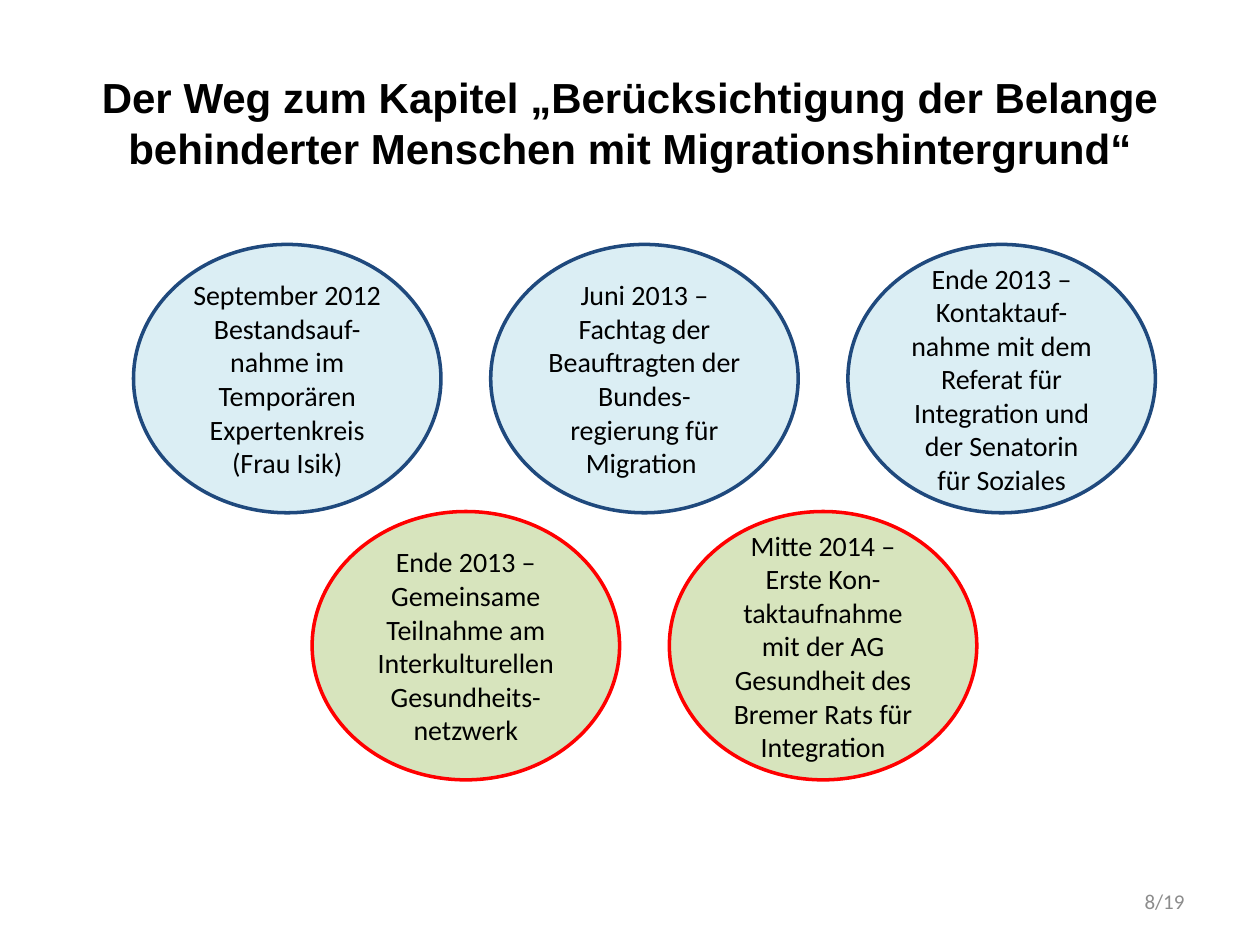
import pptx
import pptx.util
import pptx.dml.color
import pptx.enum.shapes
import pptx.enum.text

ALIGN = pptx.enum.text.PP_ALIGN
ANCHOR = pptx.enum.text.MSO_ANCHOR


def paint(code):
    return pptx.dml.color.RGBColor.from_string(code)


class Deck:
    """Holds the style, the grid and the current slide."""

    left, top = 1.06, 1.94
    step = 5.67 / 4  # half the gap between oval centres in a row
    drop = 2.12
    size = 2.44, 2.13
    looks = {"blue": ("DBEEF4", "1F497D"), "green": ("D7E4BD", "FF0000")}

    def __init__(self):
        self.show = pptx.Presentation()
        self.show.slide_width = pptx.util.Inches(10)
        self.show.slide_height = pptx.util.Inches(7.5)
        self.slide = self.show.slides.add_slide(self.show.slide_layouts[5])

    def label(self, frame, lines, align, anchor, code, **font):
        frame.word_wrap = True
        frame.auto_size = pptx.enum.text.MSO_AUTO_SIZE.NONE
        frame.vertical_anchor = anchor
        frame.text = "\n".join(lines)
        for para in frame.paragraphs:
            para.alignment = align
            for run in para.runs:
                for key, value in font.items():
                    setattr(run.font, key, value)
                run.font.color.rgb = paint(code)

    def title(self, text, box):
        shape = self.slide.shapes.title
        for key, value in zip(("left", "top", "width", "height"), box):
            setattr(shape, key, pptx.util.Inches(value))
        self.label(shape.text_frame, [text], ALIGN.CENTER, ANCHOR.TOP, "000000",
                   name="Arial", size=pptx.util.Pt(24), bold=True)

    def note(self, text, box):
        shape = self.slide.shapes.add_textbox(*map(pptx.util.Inches, box))
        self.label(shape.text_frame, [text], ALIGN.RIGHT, ANCHOR.MIDDLE, "8C8C8C",
                   name="Calibri", size=pptx.util.Pt(12))

    def oval(self, col, row, look, *lines):
        """Places an oval; col counts half steps, so rows can interlock."""
        box = (self.left + col * self.step, self.top + row * self.drop, *self.size)
        shape = self.slide.shapes.add_shape(
            pptx.enum.shapes.MSO_SHAPE.OVAL, *map(pptx.util.Inches, box))
        fill, edge = self.looks[look]
        shape.shadow.inherit = False
        shape.fill.solid()
        shape.fill.fore_color.rgb = paint(fill)
        shape.line.color.rgb = paint(edge)
        shape.line.width = pptx.util.Pt(2)
        self.label(shape.text_frame, lines, ALIGN.CENTER, ANCHOR.MIDDLE, "000000",
                   name="Calibri", size=pptx.util.Pt(16))


def main():
    deck = Deck()
    deck.title("Der Weg zum Kapitel „Berücksichtigung der Belange behinderter "
               "Menschen mit Migrationshintergrund“", (0.63, 0.52, 8.74, 1))
    deck.note("8/19", (7.17, 6.95, 2.33, 0.4))
    deck.oval(0, 0, "blue", "September 2012", "Bestandsauf-nahme im",
              "Temporären Expertenkreis", "(Frau Isik)")
    deck.oval(2, 0, "blue", "Juni 2013 – Fachtag der Beauftragten der "
              "Bundes-regierung für Migration ")
    deck.oval(4, 0, "blue", "Ende 2013 – Kontaktauf-nahme mit dem Referat für "
              "Integration und der Senatorin für Soziales")
    deck.oval(1, 1, "green", "Ende 2013 – Gemeinsame Teilnahme am "
              "Interkulturellen Gesundheits-netzwerk")
    deck.oval(3, 1, "green", "Mitte 2014 – Erste Kon-taktaufnahme mit der AG "
              "Gesundheit des Bremer Rats für Integration")
    deck.show.save("out.pptx")


if __name__ == "__main__":
    main()
